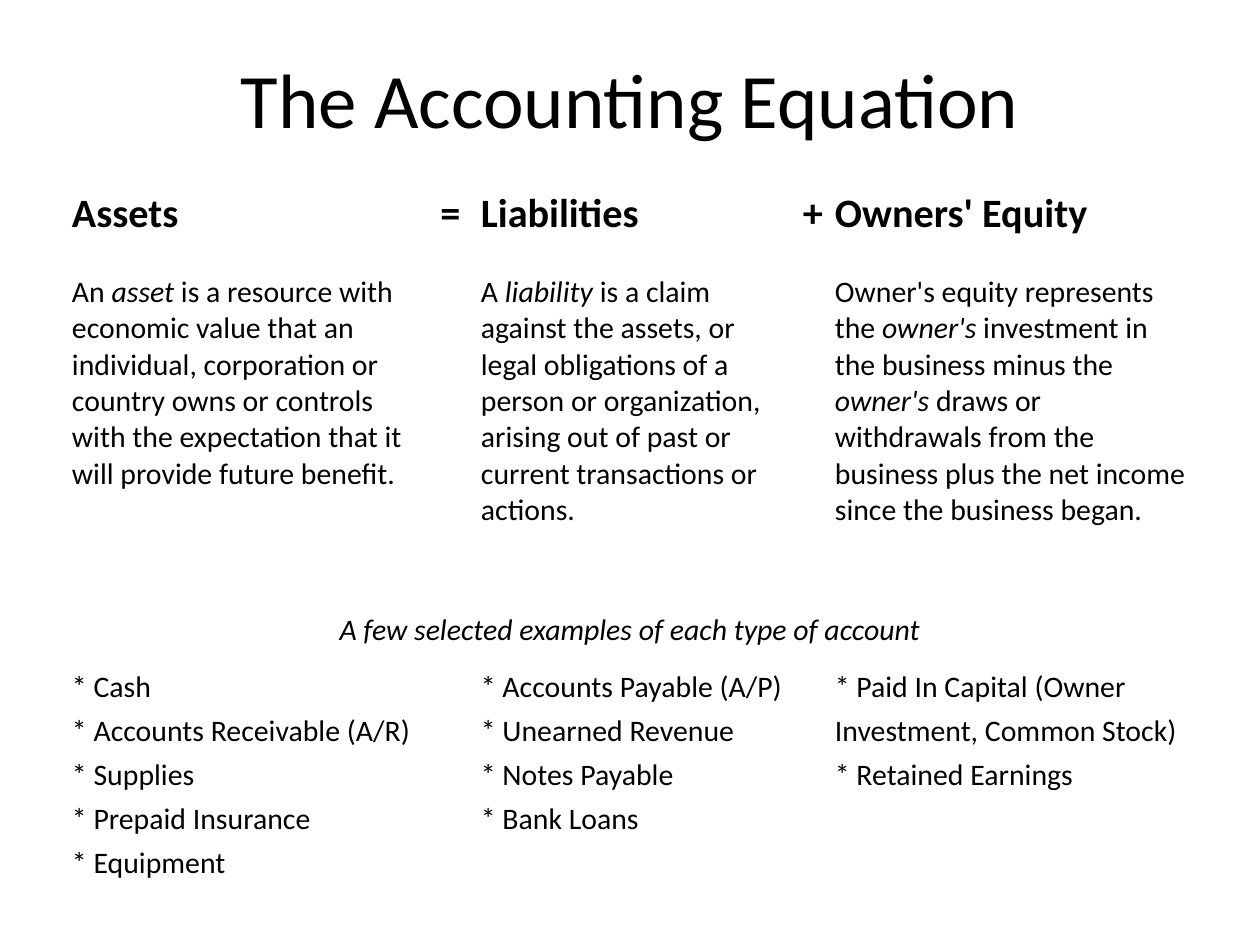
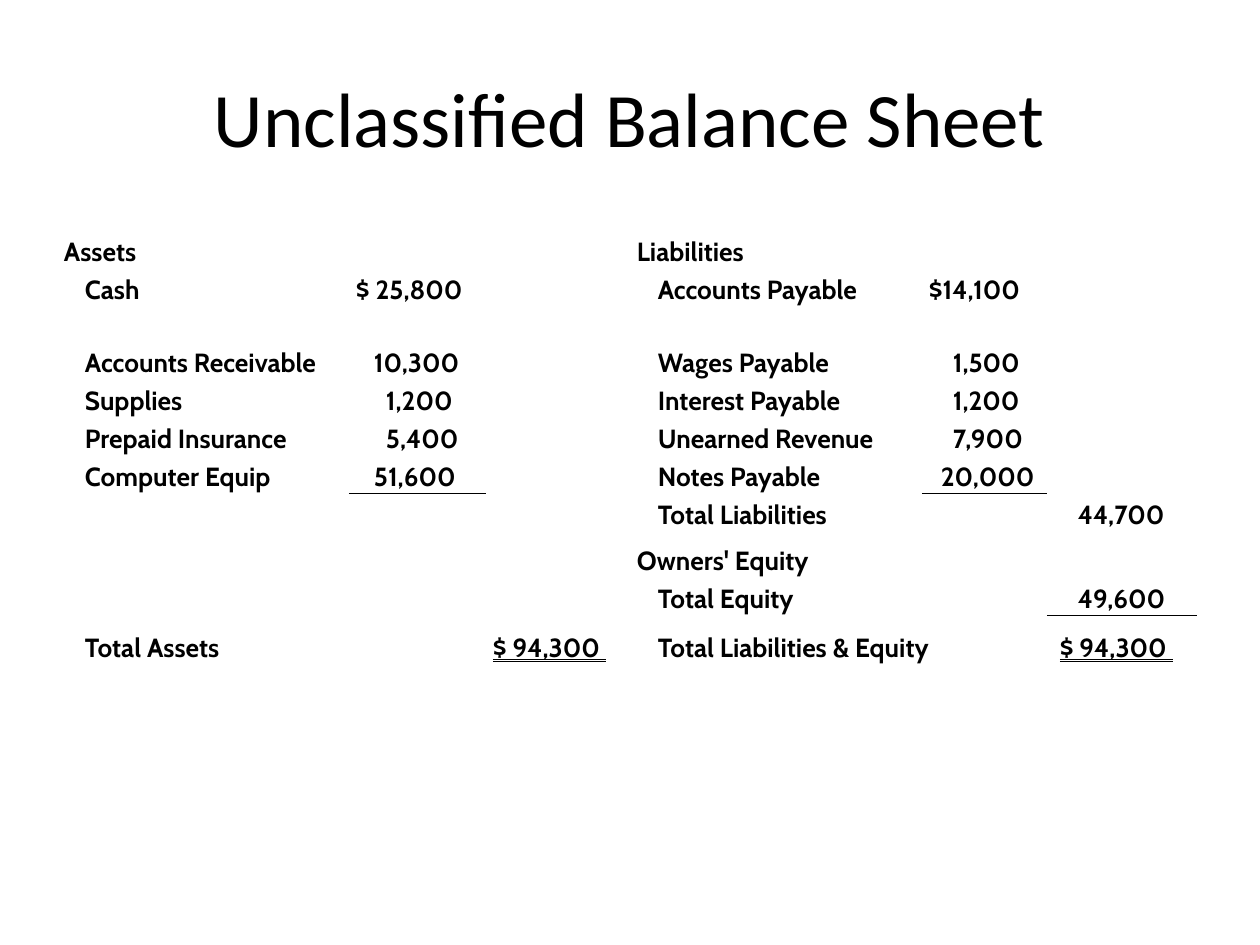
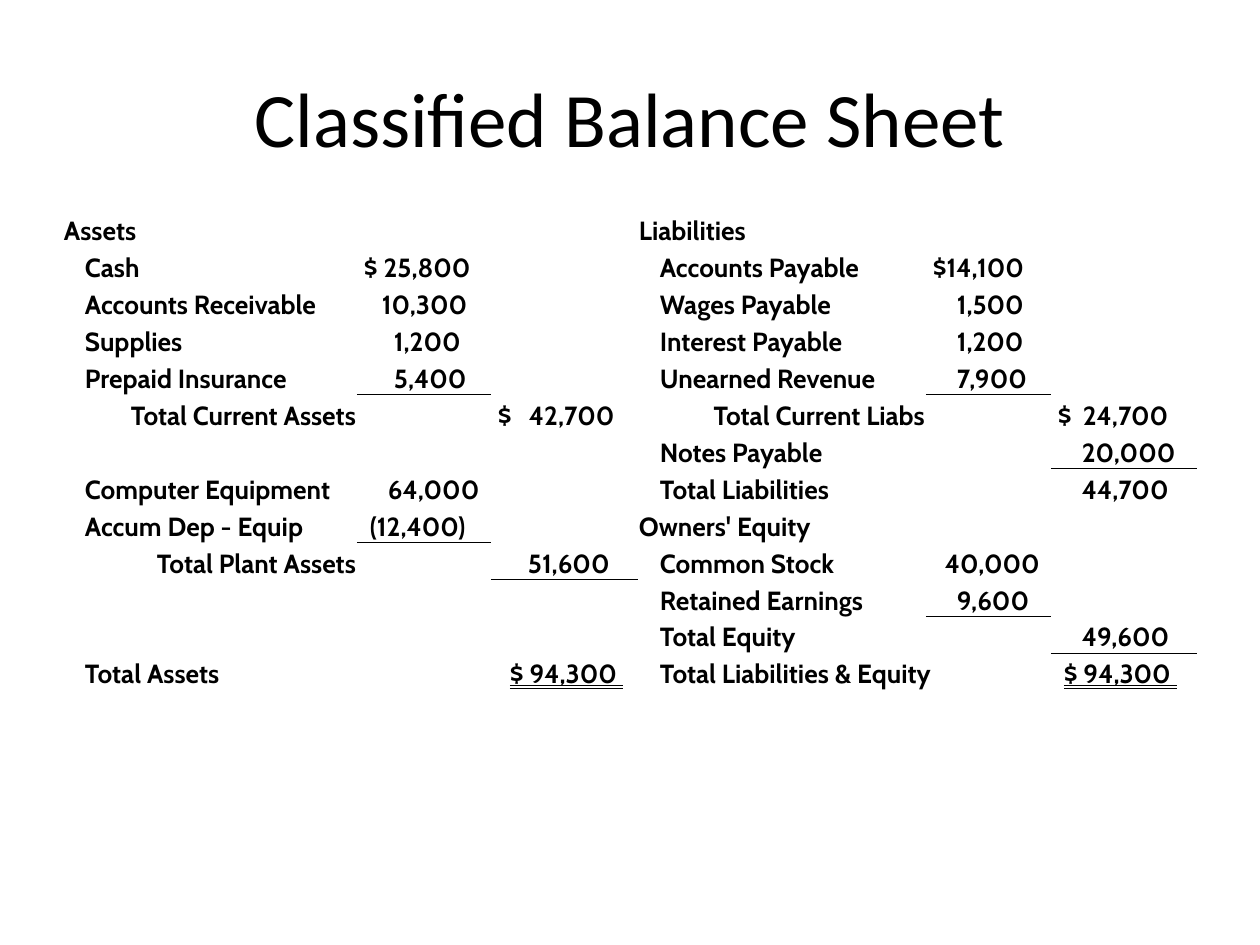
from dataclasses import dataclass
from enum import Enum
from typing import NamedTuple

from lxml.etree import SubElement
from pptx import Presentation
from pptx.dml.color import RGBColor
from pptx.enum.text import MSO_ANCHOR, MSO_UNDERLINE, PP_ALIGN
from pptx.oxml import parse_xml
from pptx.oxml.ns import nsdecls, qn
from pptx.util import Pt

EMU_PER_PX = 914400 / 126
COLORS = {"text": "000000", "rule": "000000"}
NO_STYLE_TABLE = "{2D5ABB26-0587-4C30-8999-92F81FD0307C}"
INSET = 1
SPACE = 6  # width of one indent step in the amount columns
INNER, OUTER = 2, 3  # amount columns within one side of a sheet
SIDE_COLUMNS = 4


class Kind(Enum):
    HEADING = 1
    LINE = 2
    SUBTOTAL = 3
    TOTAL = 4


class TextStyle(NamedTuple):
    font: str
    size: int
    bold: bool = False


class Box(NamedTuple):
    left: int
    top: int
    width: int
    height: int


class Grid(NamedTuple):
    left: int
    top: int
    columns: list[int]
    rows: list[int]


@dataclass(frozen=True)
class Entry:
    label: str
    amount: str = ""
    indent: int = 0
    column: int = INNER
    ruled: bool = False
    kind: Kind = Kind.LINE
    tab: int = 0
    span: int = 1


@dataclass(frozen=True)
class Sheet:
    title: str
    grid: Grid
    assets: list[Entry | None]
    claims: list[Entry | None]


class Passage(NamedTuple):
    row: int
    column: int
    text: str  # words between underscores are italic
    span: int = 1


TITLE = TextStyle("Calibri", 44)
HEADER = TextStyle("Calibri", 23, True)
BODY = TextStyle("Calibri", 17)
LEDGER = TextStyle("Cabin", 15, True)
TITLE_BOX = Box(63, 38, 1134, 158)
EQUATION_TITLE_BOX = TITLE_BOX._replace(height=120)

# The accounting equation
EQUATION_GRID = Grid(71, 179, [350, 59, 312, 42, 355], [59, 35, 328, 48, 57] + [44] * 4)
EQUATION = ["Assets", "=", "Liabilities", "+", "Owners' Equity"]
EXAMPLES_ROW = 3
PASSAGES = [
    Passage(2, 0, "An _asset_ is a resource with economic value that an individual, "
                  "corporation or country owns or controls with the expectation that "
                  "it will provide future benefit."),
    Passage(2, 2, "A_ liability_ is a claim against the assets, or legal obligations "
                  "of a person or organization, arising out of past or current "
                  "transactions or actions."),
    Passage(2, 4, "Owner's equity represents the _owner's_ investment in the business "
                  "minus the _owner's_ draws or withdrawals from the business plus "
                  "the net income since the business began."),
    Passage(EXAMPLES_ROW, 0, "_A few selected examples of each type of account_", 5),
    Passage(4, 0, "* Cash"),
    Passage(5, 0, "* Accounts Receivable (A/R)", 2),
    Passage(6, 0, "* Supplies"),
    Passage(7, 0, "* Prepaid Insurance"),
    Passage(8, 0, "* Equipment"),
    Passage(4, 2, "* Accounts Payable (A/P)", 2),
    Passage(5, 2, "* Unearned Revenue"),
    Passage(6, 2, "* Notes Payable"),
    Passage(7, 2, "* Bank Loans"),
    Passage(4, 4, "* Paid In Capital (Owner"),
    Passage(5, 4, "Investment, Common Stock)"),
    Passage(6, 4, "* Retained Earnings"),
]

# Entries that both balance sheets show
ASSETS = Entry("Assets", kind=Kind.HEADING)
LIABILITIES = Entry("Liabilities", kind=Kind.HEADING)
EQUITY = Entry("Owners' Equity", kind=Kind.HEADING)
CURRENT_ASSETS = [
    Entry("Cash", "$ 25,800", 1),
    Entry("Accounts Receivable", "10,300", 4),
    Entry("Supplies", "1,200", 6),
]
PAYABLES = [
    Entry("Accounts Payable", "$14,100", 1),
    Entry("Wages Payable", "1,500", 5),
    Entry("Interest Payable", "1,200", 5),
]
TOTAL_LIABILITIES = Entry("Total Liabilities", "44,700", 5, OUTER)
TOTAL_EQUITY = Entry("Total Equity", "49,600", 5, OUTER, True)
TOTAL_CLAIMS = Entry("Total Liabilities & Equity", "$ 94,300", 2, OUTER,
                     kind=Kind.TOTAL, span=2)


def total_assets(indent: int) -> Entry:
    return Entry("Total Assets", "$ 94,300", indent, OUTER, kind=Kind.TOTAL)


SHEETS = [
    Sheet(
        "Unclassified Balance Sheet",
        Grid(63, 230, [21, 265, 137, 150, 21, 265, 125, 150],
             [38, 38, 73, 38, 38, 38, 38, 46, 38, 49]),
        [ASSETS, *CURRENT_ASSETS,
         Entry("Prepaid Insurance", "5,400", 6),
         Entry("Computer Equip", "51,600", 4, ruled=True),
         None, None, None, total_assets(1)],
        [LIABILITIES, *PAYABLES,
         Entry("Unearned Revenue", "7,900", 5),
         Entry("Notes Payable", "20,000", 3, ruled=True),
         TOTAL_LIABILITIES, EQUITY, TOTAL_EQUITY, TOTAL_CLAIMS],
    ),
    Sheet(
        "Classified Balance Sheet",
        Grid(63, 210, [21, 273, 134, 147, 21, 267, 125, 146], [37] * 13),
        [ASSETS, *CURRENT_ASSETS,
         Entry("Prepaid Insurance", "5,400", 6, ruled=True),
         Entry("Total Current Assets", "$\t42,700", 1, OUTER, kind=Kind.SUBTOTAL, tab=31),
         None,
         Entry("Computer Equipment", "64,000", 5),
         Entry("Accum Dep - Equip", "(12,400)", 2, ruled=True),
         Entry("Total Plant Assets", "51,600", 6, OUTER, True, Kind.SUBTOTAL),
         None, None, total_assets(3)],
        [LIABILITIES, *PAYABLES,
         Entry("Unearned Revenue", "7,900", 5, ruled=True),
         Entry("Total Current Liabs", "$\t24,700", 1, OUTER, kind=Kind.SUBTOTAL, tab=25),
         Entry("Notes Payable", "20,000", 5, OUTER, True),
         TOTAL_LIABILITIES, EQUITY,
         Entry("Common Stock", "40,000", 3),
         Entry("Retained Earnings", "9,600", 5, ruled=True),
         TOTAL_EQUITY, TOTAL_CLAIMS],
    ),
]


def emu(px: int) -> int:
    return round(px * EMU_PER_PX)


def format_run(run, style: TextStyle, italic: bool = False) -> None:
    run.font.name = style.font
    run.font.size = Pt(style.size)
    run.font.bold = style.bold
    run.font.italic = italic
    run.font.color.rgb = RGBColor.from_string(COLORS["text"])


def add_titled_slide(presentation, title: str, box: Box):
    slide = presentation.slides.add_slide(presentation.slide_layouts[5])
    shape = slide.shapes.title
    shape.left, shape.top, shape.width, shape.height = map(emu, box)
    shape.text_frame.text = title
    shape.text_frame.vertical_anchor = MSO_ANCHOR.MIDDLE
    paragraph = shape.text_frame.paragraphs[0]
    paragraph.alignment = PP_ALIGN.CENTER
    format_run(paragraph.runs[0], TITLE)
    return slide


def add_plain_table(slide, grid: Grid):
    """Add a table without fills or borders, sized by the grid."""
    shape = slide.shapes.add_table(
        len(grid.rows), len(grid.columns), emu(grid.left), emu(grid.top),
        emu(sum(grid.columns)), emu(sum(grid.rows)))
    table = shape.table
    table.first_row = table.horz_banding = False
    shape._element.find(".//" + qn("a:tableStyleId")).text = NO_STYLE_TABLE
    for column, width in zip(table.columns, grid.columns):
        column.width = emu(width)
    for row, height in zip(table.rows, grid.rows):
        row.height = emu(height)
    for cell in table.iter_cells():
        cell.margin_left = cell.margin_right = cell.margin_top = emu(INSET)
        cell.margin_bottom = 0
        cell.vertical_anchor = MSO_ANCHOR.BOTTOM
        cell.fill.background()
        # A small end mark keeps empty cells from stretching their row
        SubElement(cell.text_frame.paragraphs[0]._p, qn("a:endParaRPr"), sz="1000")
    return table


def write_cell(cell, text: str, style: TextStyle, alignment=PP_ALIGN.LEFT):
    paragraph = cell.text_frame.paragraphs[0]
    paragraph.alignment = alignment
    for index, piece in enumerate(text.split("_")):
        if piece:
            run = paragraph.add_run()
            run.text = piece
            format_run(run, style, italic=index % 2 == 1)
    return paragraph


def merge_right(table, row: int, column: int, span: int) -> None:
    if span > 1:
        table.cell(row, column).merge(table.cell(row, column + span - 1))


def rule_below(cell) -> None:
    line = parse_xml(
        f'<a:lnB {nsdecls("a")} w="{Pt(0.5)}"><a:solidFill>'
        f'<a:srgbClr val="{COLORS["rule"]}"/></a:solidFill></a:lnB>')
    cell._tc.get_or_add_tcPr().insert(0, line)


def set_tab(paragraph, position: int) -> None:
    tabs = SubElement(paragraph._p.get_or_add_pPr(), qn("a:tabLst"))
    SubElement(tabs, qn("a:tab"), pos=str(emu(position)), algn="l")


def write_amount(cell, entry: Entry) -> None:
    indent = entry.indent * SPACE
    if entry.kind is Kind.TOTAL:
        # The double underline also runs below the indent
        paragraph = write_cell(cell, f"\t{entry.amount} ", LEDGER)
        paragraph.runs[0].font.underline = MSO_UNDERLINE.DOUBLE_LINE
        set_tab(paragraph, indent)
        return
    paragraph = write_cell(cell, entry.amount, LEDGER)
    cell.margin_left = emu(INSET + indent)
    if entry.tab:
        set_tab(paragraph, entry.tab)
    if entry.ruled:
        rule_below(cell)


def write_side(table, entries: list[Entry | None], first_column: int) -> None:
    for row, entry in enumerate(entries):
        if entry is None:
            continue
        heading = entry.kind is Kind.HEADING
        label_column = first_column + (0 if heading else 1)
        merge_right(table, row, label_column, 2 if heading else entry.span)
        alignment = PP_ALIGN.RIGHT if entry.kind is Kind.SUBTOTAL else PP_ALIGN.LEFT
        write_cell(table.cell(row, label_column), entry.label, LEDGER, alignment)
        if entry.amount:
            write_amount(table.cell(row, first_column + entry.column), entry)


def add_equation_slide(presentation) -> None:
    slide = add_titled_slide(presentation, "The Accounting Equation", EQUATION_TITLE_BOX)
    table = add_plain_table(slide, EQUATION_GRID)
    for column, term in enumerate(EQUATION):
        alignment = PP_ALIGN.CENTER if term in "=+" else PP_ALIGN.LEFT
        write_cell(table.cell(0, column), term, HEADER, alignment)
    for passage in PASSAGES:
        merge_right(table, passage.row, passage.column, passage.span)
        cell = table.cell(passage.row, passage.column)
        centred = passage.row == EXAMPLES_ROW
        write_cell(cell, passage.text, BODY, PP_ALIGN.CENTER if centred else PP_ALIGN.LEFT)
        if passage.row < EXAMPLES_ROW:
            cell.vertical_anchor = MSO_ANCHOR.TOP


def add_sheet_slide(presentation, sheet: Sheet) -> None:
    slide = add_titled_slide(presentation, sheet.title, TITLE_BOX)
    table = add_plain_table(slide, sheet.grid)
    write_side(table, sheet.assets, 0)
    write_side(table, sheet.claims, SIDE_COLUMNS)


def main() -> None:
    presentation = Presentation()
    presentation.slide_width, presentation.slide_height = emu(1260), emu(945)
    add_equation_slide(presentation)
    for sheet in SHEETS:
        add_sheet_slide(presentation, sheet)
    presentation.save("out.pptx")


if __name__ == "__main__":
    main()
